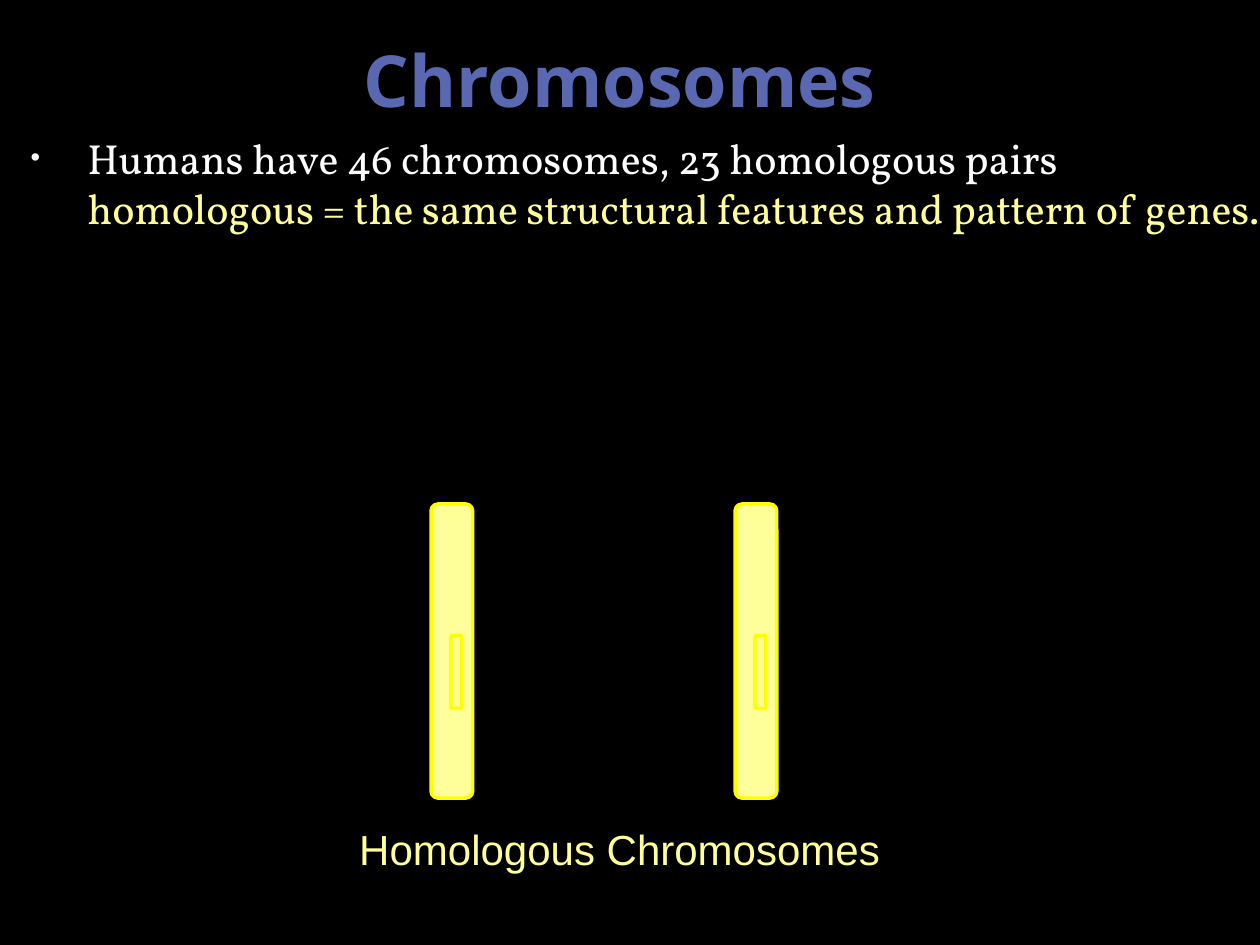
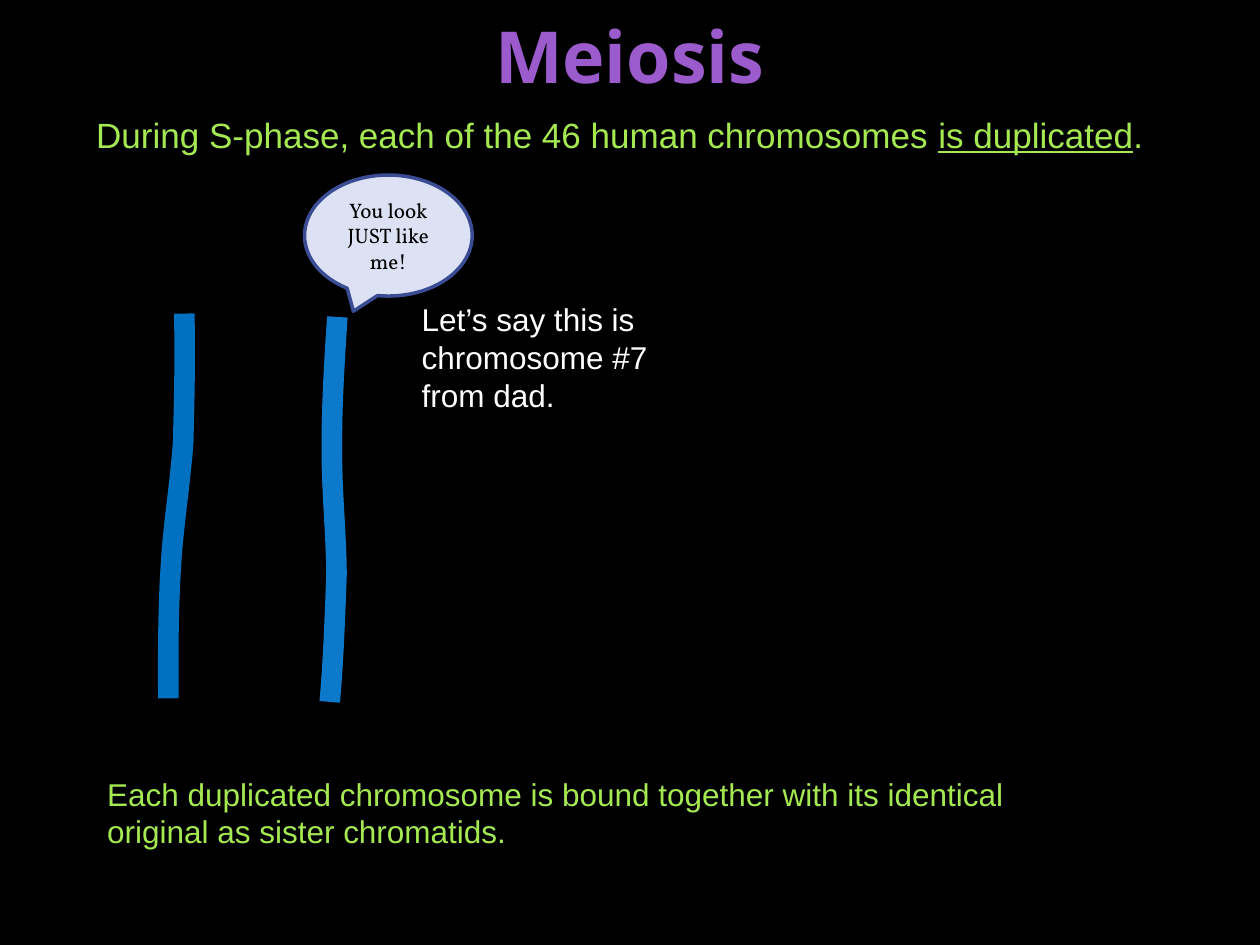
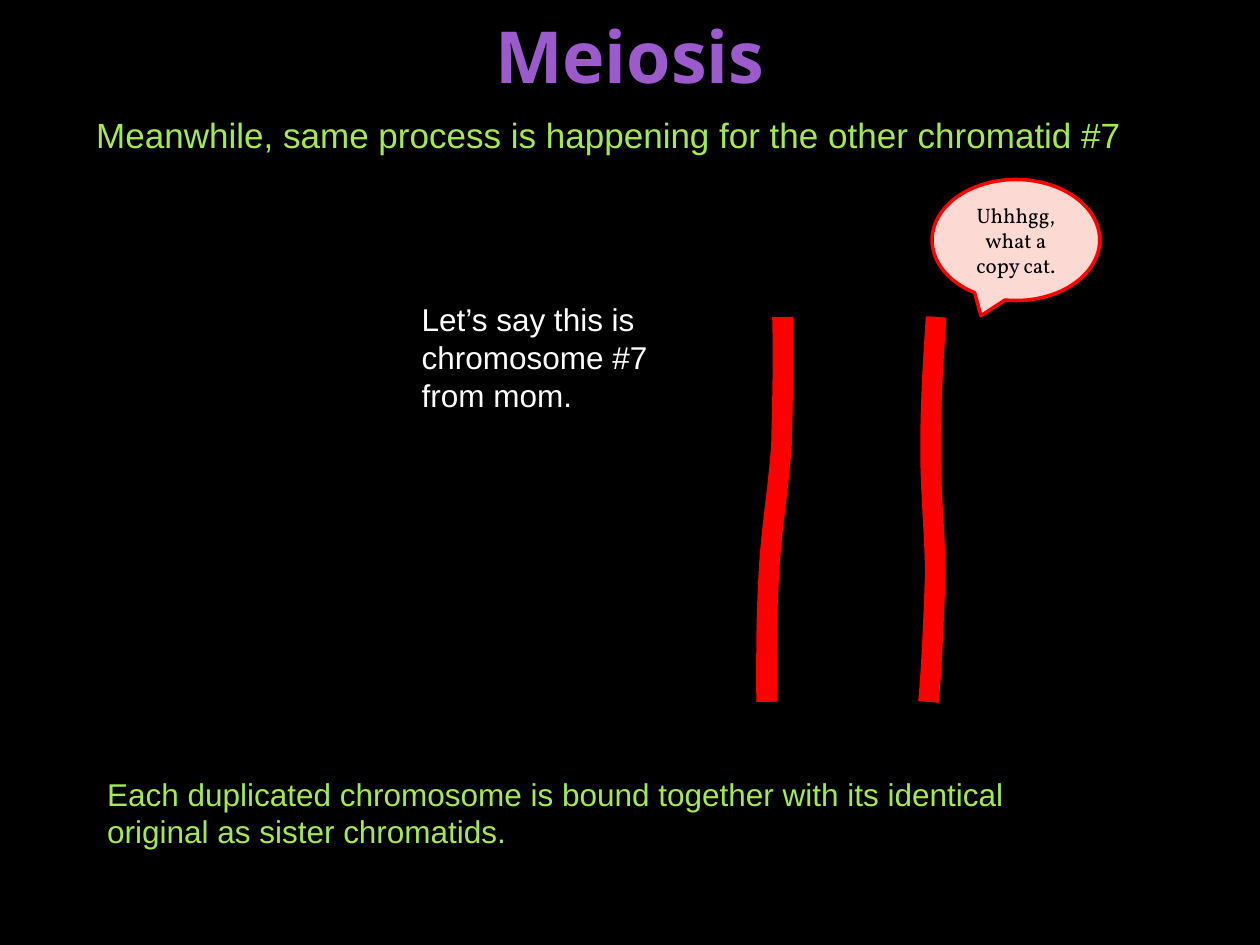
from lxml import etree
from pptx import Presentation
from pptx.dml.color import RGBColor
from pptx.enum.shapes import MSO_SHAPE
from pptx.enum.text import MSO_ANCHOR, PP_ALIGN
from pptx.oxml.ns import qn
from pptx.util import Cm, Pt

ROUNDED = MSO_SHAPE.ROUNDED_RECTANGLE
CALLOUT = MSO_SHAPE.OVAL_CALLOUT
MIDDLE, TOP = MSO_ANCHOR.MIDDLE, MSO_ANCHOR.TOP
CENTER, LEFT = PP_ALIGN.CENTER, PP_ALIGN.LEFT

BLACK, WHITE = "000000", "FFFFFF"
PALE_YELLOW, YELLOW = "FFFF99", "FFFF00"
BLUE_TITLE, PURPLE_TITLE, GREEN = "5968B0", "9C5BCD", "A5E952"
HEAD_FONT, BODY_FONT, LABEL_FONT = "Open Sans", "Vollkorn", "Arial"
TITLE_SIZE = 41

# Strand centre line: Bezier points in cm around its middle, three per segment
STRAND = [(-0.69, -3.82), (-0.58, -2.98), (-0.46, -2.1), (-0.29, -1.25), (-0.13, -0.4),
          (0.14, 0.44), (0.31, 1.27), (0.45, 2.13), (0.59, 2.99), (0.68, 3.82)]
STEPS = 10


def write(shape, spans, size, font, color, align=LEFT, anchor=TOP):
    """Fill a shape with one paragraph and return the paragraph."""
    frame = shape.text_frame
    frame.word_wrap = True
    frame.vertical_anchor = anchor
    para = frame.paragraphs[0]
    para.alignment = align
    for text in spans:
        para.add_run().text = text
    para.font.size = Pt(size)
    para.font.name = font
    para.font.bold = size == TITLE_SIZE
    para.font.color.rgb = RGBColor.from_string(color)
    return para


def add_solid(page, kind, box, fill, line):
    shape = page.shapes.add_shape(kind, *map(Cm, box))
    shape.shadow.inherit = False
    shape.fill.solid()
    shape.fill.fore_color.rgb = RGBColor.from_string(fill)
    shape.line.color.rgb = RGBColor.from_string(line)
    shape.line.width = Pt(2)
    return shape


deck = Presentation()
deck.slide_width, deck.slide_height = Cm(25.4), Cm(19.05)
pages = [deck.slides.add_slide(deck.slide_layouts[6]) for _ in range(3)]
for page in pages:
    page.background.fill.solid()
    page.background.fill.fore_color.rgb = RGBColor.from_string(BLACK)

# Slide 1: the homologous pair, each chromosome with a gene
page = pages[0]
for left in (8.69, 14.82):
    add_solid(page, ROUNDED, (left, 10.16, 0.84, 5.93), PALE_YELLOW, YELLOW)
    add_solid(page, ROUNDED, (left + 0.4, 12.81, 0.22, 1.47), PALE_YELLOW, YELLOW)

# Slide 1: bulleted definition
box = page.shapes.add_textbox(Cm(-0.02), Cm(2.54), Cm(25.83), Cm(12.57))
para = box.text_frame.paragraphs[0]
props = para._p.get_or_add_pPr()
props.set("marL", str(Cm(1.53)))
props.set("indent", str(Cm(-1.14)))
bullet_color = etree.SubElement(props, qn("a:buClr"))
etree.SubElement(bullet_color, qn("a:srgbClr"), val="F9F9F9")
etree.SubElement(props, qn("a:buSzPct"), val="65000")
etree.SubElement(props, qn("a:buFont"), typeface=LABEL_FONT)
etree.SubElement(props, qn("a:buChar"), char="•")
write(box, ["Humans have 46 chromosomes, 23 homologous pairs"], 24, BODY_FONT, WHITE)
para.add_line_break()
span = para.add_run()
span.text = "homologous = the same structural features and pattern of genes."
span.font.color.rgb = RGBColor.from_string(PALE_YELLOW)

# Slide 1: caption and title
box = page.shapes.add_textbox(Cm(4.02), Cm(16.47), Cm(16.94), Cm(2.31))
write(box, ["Homologous Chromosomes"], 24, LABEL_FONT, PALE_YELLOW, CENTER)
box = page.shapes.add_textbox(Cm(1.07), 0, Cm(22.86), Cm(3.18))
write(box, ["Chromosomes"], TITLE_SIZE, HEAD_FONT, BLUE_TITLE, CENTER, MIDDLE)

# Slides 2 and 3: one parent each
# lead spans, parent, strand middles, strand colours, callout place, fill, line, words
parents = [
    (["During S-phase, each of the 46 human chromosomes ", "is duplicated", "."],
     "dad", ((6.73, 10.27), (3.56, 10.2)), ("0D79CA", "0070C0"),
     (6.14, 3.53), "DCE1F4", "3A4C94", "You look JUST like me!"),
    (["Meanwhile, same process is happening for the other chromatid #7"],
     "mom", ((18.8, 10.27), (15.62, 10.27)), ("FF0000", "FF0000"),
     (18.79, 3.62), "FCD9D3", "FF0000", "Uhhhgg, what a copy cat."),
]
for page, parent in zip(pages[1:], parents):
    lead, name, middles, colors, place, fill, line, words = parent

    # Title and texts
    box = page.shapes.add_textbox(Cm(1.27), 0, Cm(22.86), Cm(2.21))
    write(box, ["Meiosis"], TITLE_SIZE, HEAD_FONT, PURPLE_TITLE, CENTER, MIDDLE)
    box = page.shapes.add_textbox(Cm(8.25), Cm(5.93), Cm(6.15), Cm(2.57))
    write(box, [f"Let’s say this is chromosome #7 from {name}."], 18, LABEL_FONT, WHITE)
    box = page.shapes.add_textbox(Cm(1.69), Cm(2.16), Cm(22.66), Cm(1.12))
    para = write(box, lead, 20, LABEL_FONT, GREEN)
    for span in para.runs[1:2]:
        span.font.underline = True
    box = page.shapes.add_textbox(Cm(1.91), Cm(15.49), Cm(20.12), Cm(1.8))
    write(box, ["Each duplicated chromosome is bound together with its identical "
                "original as sister chromatids."], 18, LABEL_FONT, GREEN)

    # Two chromatid strands: the second mirrors the first, each tilted its own way
    for (mid_x, mid_y), color, mirror, tilt in zip(middles, colors, (1, -1), (11.3, 352.2)):
        points = []
        for first in range(0, len(STRAND) - 1, 3):
            a, b, c, d = STRAND[first:first + 4]
            for step in range(STEPS + 1):
                t = step / STEPS
                x, y = (a[i] * (1 - t) ** 3 + 3 * b[i] * t * (1 - t) ** 2
                        + 3 * c[i] * t ** 2 * (1 - t) + d[i] * t ** 3 for i in (0, 1))
                points.append((Cm(mid_x + x), Cm(mid_y + mirror * y)))
        outline = page.shapes.build_freeform(*points[0])
        outline.add_line_segments(points[1:], close=False)
        chromatid = outline.convert_to_shape()
        chromatid.rotation = tilt
        chromatid.shadow.inherit = False
        chromatid.fill.background()
        chromatid.line.color.rgb = RGBColor.from_string(color)
        chromatid.line.width = Pt(11.75)

    # Speech bubble
    bubble = add_solid(page, CALLOUT, (*place, 3.38, 2.44), fill, line)
    write(bubble, [words], 12, BODY_FONT, BLACK, CENTER, MIDDLE)

deck.save("out.pptx")
